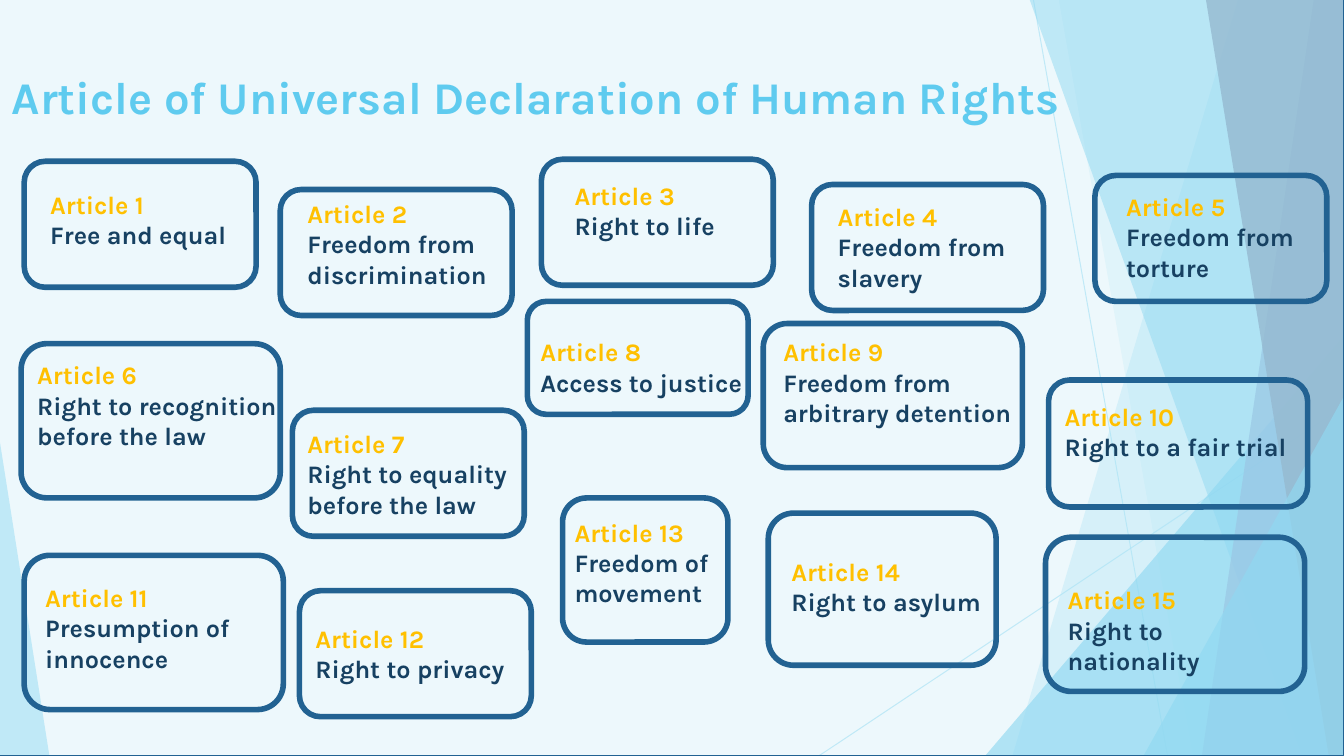
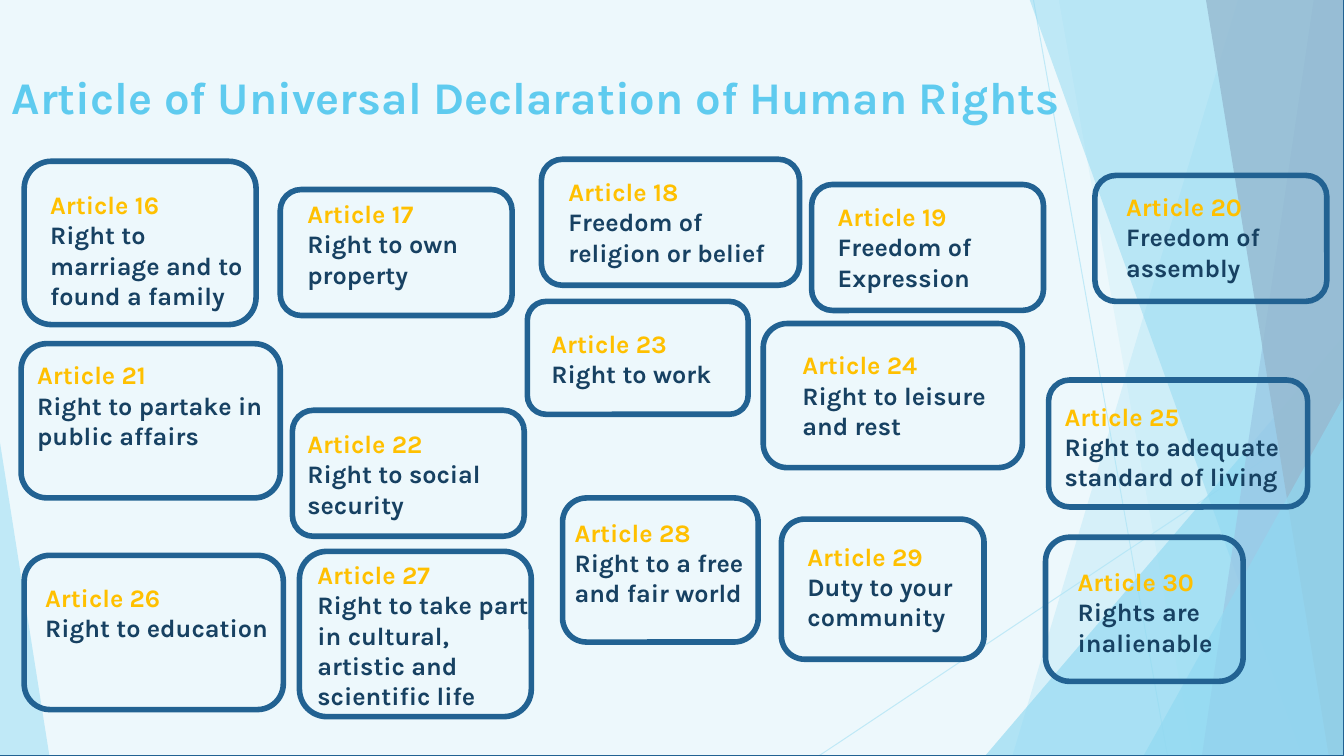
from lxml.etree import SubElement
from pptx import Presentation
from pptx.dml.color import RGBColor
from pptx.enum.shapes import MSO_CONNECTOR, MSO_SHAPE
from pptx.enum.text import MSO_ANCHOR, MSO_AUTO_SIZE, PP_ALIGN
from pptx.oxml.ns import qn
from pptx.util import Inches, Pt

WIDTH, HEIGHT = 13.33, 7.5
FONT = "Karla"
COLORS = {
    "sky": "5FCBEF", "cyan": "17B0E4", "blue": "2E83C3", "navy": "226292",
    "veil": "E2F4FA", "gold": "FFC000", "ink": "174162",
}
TITLE = "Article of Universal Declaration of Human Rights"

# Fifteen card places: frame (left, top, width, height), text (left, top, width)
CARDS = [
    ((0.24, 1.60, 2.30, 1.25), (0.40, 1.83, 2.14)),
    ((2.78, 1.88, 2.30, 1.25), (2.95, 1.92, 2.14)),
    ((5.37, 1.58, 2.30, 1.25), (5.60, 1.74, 2.14)),
    ((8.05, 1.83, 2.30, 1.25), (8.21, 1.95, 2.14)),
    ((10.86, 1.74, 2.30, 1.25), (11.07, 1.85, 2.14)),
    ((0.21, 3.41, 2.57, 1.53), (0.27, 3.52, 2.60)),
    ((2.90, 4.07, 2.30, 1.25), (2.95, 4.20, 2.60)),
    ((5.23, 2.99, 2.19, 1.12), (5.26, 3.29, 2.51)),
    ((7.57, 3.21, 2.57, 1.43), (7.67, 3.29, 2.52)),
    ((10.40, 3.77, 2.57, 1.26), (10.46, 3.93, 2.51)),
    ((0.24, 5.51, 2.57, 1.53), (0.35, 5.73, 2.60)),
    ((2.97, 5.86, 2.30, 1.25), (3.03, 6.13, 2.60)),
    ((5.58, 4.94, 1.64, 1.43), (5.60, 5.08, 1.95)),
    ((7.62, 5.09, 2.26, 1.51), (7.75, 5.47, 2.52)),
    ((10.37, 5.33, 2.57, 1.53), (10.49, 5.75, 2.51)),
]

# Rights in article order, one list per slide
RIGHTS = [
    ["Free and equal", "Freedom from discrimination", "Right to life",
     "Freedom from slavery", "Freedom from torture",
     "Right to recognition before the law", "Right to equality before the law",
     "Access to justice", "Freedom from arbitrary detention",
     "Right to a fair trial", "Presumption of innocence", "Right to privacy",
     "Freedom of movement", "Right to asylum", "Right to nationality"],
    ["Right to marriage and to found a family", "Right to own property",
     "Freedom of religion or belief", "Freedom of Expression",
     "Freedom of assembly", "Right to partake in public affairs",
     "Right to social security", "Right to work", "Right to leisure and rest",
     "Right to adequate standard of living", "Right to education",
     "Right to take part in cultural, artistic and scientific life",
     "Right to a free and fair world", "Duty to your community",
     "Rights are inalienable"],
]

# Articles whose card departs from its usual place
SPECIAL_CARDS = {
    16: ((0.24, 1.60, 2.30, 1.62), (0.40, 1.83, 2.14)),
    18: ((5.37, 1.58, 2.56, 1.25), (5.54, 1.70, 2.40)),
    23: ((5.23, 2.99, 2.19, 1.12), (5.37, 3.21, 2.51)),
    24: ((7.57, 3.21, 2.57, 1.43), (7.86, 3.42, 2.37)),
    27: ((2.97, 5.47, 2.30, 1.64), (3.05, 5.50, 2.31)),
    28: ((5.58, 4.94, 1.94, 1.43), (5.60, 5.08, 1.95)),
    29: ((7.75, 5.15, 2.01, 1.39), (7.91, 5.32, 2.52)),
    30: ((10.37, 5.33, 1.96, 1.43), (10.59, 5.57, 2.51)),
}

# Backdrop: rays are lines; bands run to the right edge from top x to bottom x;
# corners are right triangles (left, top, width, adjustment). Last: colour, opacity %
RAYS = [((10.25, 0), (11.58, HEIGHT)), ((WIDTH, 4.03), (8.12, HEIGHT))]
FACETS = [
    ("band", (12.28, 10.04), "sky", 36),
    ("band", (10.50, 11.83), "sky", 20),
    ("corner", (9.77, 3.33, 3.56, 1), "cyan", 66),
    ("band", (10.21, 12.91), "cyan", 50),
    ("band", (13.03, 11.92), "blue", 70),
    ("band", (11.96, 13.18), "navy", 80),
    ("corner", (11.34, 3.93, 1.99, 1), "cyan", 66),
    ("corner", (0, 4.39, 0.49, 0), "sky", 70),
]


def rgb(name):
    return RGBColor.from_string(COLORS[name])


def inches(*lengths):
    return [Inches(length) for length in lengths]


def set_opacity(part, percent):
    """Apply opacity to the first colour of a shape or line."""
    color = next(part._element.spPr.iter(qn("a:srgbClr")))
    SubElement(color, qn("a:alpha"), val=str(percent * 1000))


def paint(shape, color, opacity):
    shape.shadow.inherit = False
    shape.fill.solid()
    shape.fill.fore_color.rgb = rgb(color)
    set_opacity(shape, opacity)
    shape.line.fill.background()


def add_backdrop(slide):
    for start, end in RAYS:
        ray = slide.shapes.add_connector(
            MSO_CONNECTOR.STRAIGHT, *inches(*start, *end))
        ray.line.color.rgb = rgb("sky")
        ray.line.width = Pt(0.75)
        set_opacity(ray, 70)
        SubElement(ray._element.spPr, qn("a:effectLst"))

    for kind, place, color, opacity in FACETS:
        if kind == "band":
            top_x, bottom_x = place
            outline = slide.shapes.build_freeform(*inches(top_x, -0.01))
            outline.add_line_segments([
                inches(WIDTH, -0.01), inches(WIDTH, HEIGHT),
                inches(bottom_x, HEIGHT)])
            facet = outline.convert_to_shape()
        else:
            left, top, width, apex = place
            facet = slide.shapes.add_shape(
                MSO_SHAPE.ISOSCELES_TRIANGLE,
                *inches(left, top, width, HEIGHT - top))
            facet.adjustments[0] = apex
        paint(facet, color, opacity)

    veil = slide.shapes.add_shape(
        MSO_SHAPE.RECTANGLE, *inches(0, 0, WIDTH, HEIGHT))
    paint(veil, "veil", 60)
    veil.line.color.rgb = rgb("navy")
    veil.line.width = Pt(0)


def add_text(slide, place, lines, size, align=PP_ALIGN.LEFT):
    """Add a text box with one paragraph per (text, colour) pair."""
    box = slide.shapes.add_textbox(*inches(*place))
    frame = box.text_frame
    frame.word_wrap = True
    frame.vertical_anchor = MSO_ANCHOR.TOP
    frame.text = "\n".join(text for text, _ in lines)
    for paragraph, (_, color) in zip(frame.paragraphs, lines):
        paragraph.alignment = align
        font = paragraph.font
        font.name, font.size, font.bold = FONT, Pt(size), True
        font.color.rgb = rgb(color)
    return frame


def add_card(slide, number, right, frame_place, text_place):
    border = slide.shapes.add_shape(
        MSO_SHAPE.ROUNDED_RECTANGLE, *inches(*frame_place))
    border.shadow.inherit = False
    border.fill.background()
    border.line.color.rgb = rgb("navy")
    border.line.width = Pt(4)
    lines = [(f"Article {number}", "gold"), (right, "ink")]
    text = add_text(slide, (*text_place, 1.01), lines, 18)
    text.auto_size = MSO_AUTO_SIZE.SHAPE_TO_FIT_TEXT


def main():
    deck = Presentation()
    deck.slide_width, deck.slide_height = inches(WIDTH, HEIGHT)
    number = 0
    for rights in RIGHTS:
        slide = deck.slides.add_slide(deck.slide_layouts[6])
        add_backdrop(slide)
        add_text(slide, (0, 0.64, 10.63, 0.7), [(TITLE, "sky")], 32.4,
                 PP_ALIGN.CENTER)
        for right, usual_card in zip(rights, CARDS):
            number += 1
            add_card(slide, number, right,
                     *SPECIAL_CARDS.get(number, usual_card))
    deck.save("out.pptx")


if __name__ == "__main__":
    main()
